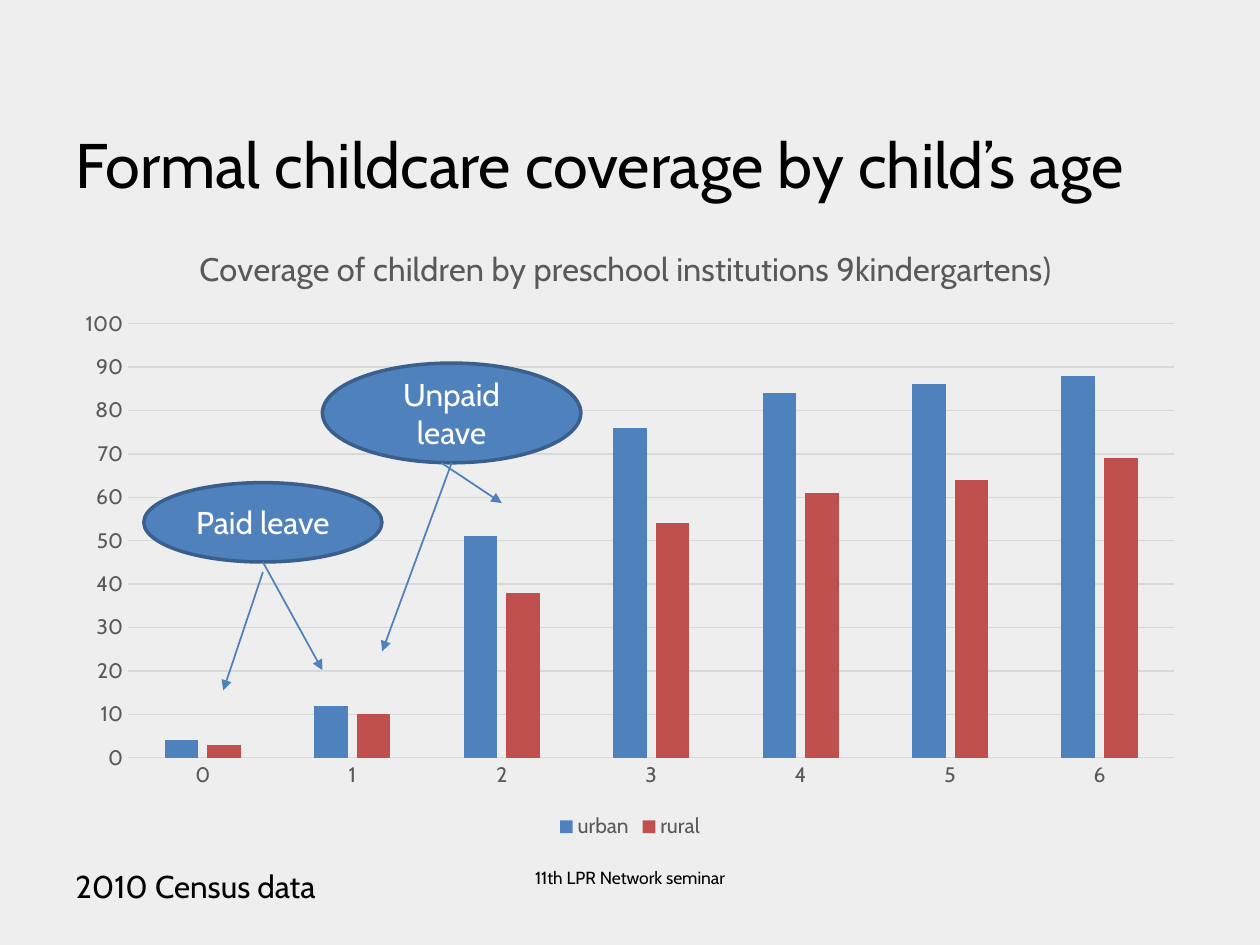
from dataclasses import dataclass

from lxml import etree
from pptx import Presentation
from pptx.chart.data import CategoryChartData
from pptx.dml.color import RGBColor
from pptx.enum.chart import XL_CHART_TYPE, XL_LEGEND_POSITION, XL_TICK_MARK
from pptx.enum.shapes import MSO_CONNECTOR, MSO_SHAPE
from pptx.enum.text import MSO_ANCHOR, PP_ALIGN
from pptx.oxml.ns import qn
from pptx.util import Cm, Pt

COLUMNS = XL_CHART_TYPE.COLUMN_CLUSTERED
LEGEND_BOTTOM = XL_LEGEND_POSITION.BOTTOM
NO_TICK = XL_TICK_MARK.NONE
STRAIGHT = MSO_CONNECTOR.STRAIGHT
ELLIPSE = MSO_SHAPE.OVAL
TOP, MIDDLE, BOTTOM = MSO_ANCHOR.TOP, MSO_ANCHOR.MIDDLE, MSO_ANCHOR.BOTTOM
LEFT, CENTER = PP_ALIGN.LEFT, PP_ALIGN.CENTER


@dataclass(frozen=True)
class Theme:
    font: str = "Cabin"
    background: str = "EEEEEE"
    text: str = "000000"
    light: str = "FFFFFF"
    muted: str = "595959"
    grid: str = "D9D9D9"
    urban: str = "4F81BD"
    rural: str = "C0504D"
    outline: str = "3A5F8C"
    title_size: float = 36
    chart_title_size: float = 18.6
    body_size: float = 18
    label_size: float = 12
    footer_size: float = 10


THEME = Theme()

AGES = ["0", "1", "2", "3", "4", "5", "6"]
COVERAGE = [
    ("urban", (4, 12, 51, 76, 84, 86, 88), THEME.urban),
    ("rural", (3, 10, 38, 54, 61, 64, 69), THEME.rural),
]

# Text, box in cm, arrows as (start, end) offsets from the bottom centre
CALLOUTS = [
    ("Paid leave", (2.9, 9.73, 4.8, 1.6),
     [((0, 0.2), (-0.8, 2.59)), ((0, 0), (1.2, 2.18))]),
    ("Unpaid leave", (6.5, 7.32, 5.21, 2.01),
     [((0, 0), (-1.4, 3.8)), ((-0.21, 0), (1.01, 0.81))]),
]


def rgb(value):
    return RGBColor.from_string(value)


def set_font(font, size, color):
    font.name = THEME.font
    font.size = Pt(size)
    font.bold = False
    font.color.rgb = rgb(color)


def write(tf, text, size, color, align, anchor):
    tf.word_wrap = True
    tf.vertical_anchor = anchor
    p = tf.paragraphs[0]
    p.alignment = align
    r = p.add_run()
    r.text = text
    set_font(r.font, size, color)


def add_text(slide, box, text, size, align=LEFT, anchor=TOP):
    tb = slide.shapes.add_textbox(*map(Cm, box))
    write(tb.text_frame, text, size, THEME.text, align, anchor)


def add_arrow(slide, start, end):
    line = slide.shapes.add_connector(STRAIGHT, *map(Cm, (*start, *end)))
    line.line.color.rgb = rgb(THEME.urban)
    line.line.width = Pt(1)
    etree.SubElement(line.line._get_or_add_ln(), qn("a:tailEnd"), type="triangle")
    etree.SubElement(line._element.spPr, qn("a:effectLst"))


def add_callout(slide, box, text, arrows):
    """Place an ellipse in the box, with arrows leaving its lower edge."""
    sp = slide.shapes.add_shape(ELLIPSE, *map(Cm, box))
    sp.shadow.inherit = False
    sp.fill.solid()
    sp.fill.fore_color.rgb = rgb(THEME.urban)
    sp.line.color.rgb = rgb(THEME.outline)
    sp.line.width = Pt(2)
    write(sp.text_frame, text, THEME.body_size, THEME.light, CENTER, MIDDLE)

    x, y, w, h = box
    for (x1, y1), (x2, y2) in arrows:
        cx, cy = x + w / 2, y + h
        add_arrow(slide, (cx + x1, cy + y1), (cx + x2, cy + y2))


def style_line(line):
    line.color.rgb = rgb(THEME.grid)
    line.width = Pt(0.75)


def style_axes(chart):
    for axis in (chart.category_axis, chart.value_axis):
        axis.major_tick_mark = axis.minor_tick_mark = NO_TICK
        set_font(axis.tick_labels.font, THEME.label_size, THEME.muted)
    style_line(chart.category_axis.format.line)

    values = chart.value_axis
    values.minimum_scale, values.maximum_scale = 0, 100
    values.major_unit = 10
    values.format.line.fill.background()
    style_line(values.major_gridlines.format.line)


def add_coverage_chart(slide, box):
    data = CategoryChartData()
    data.categories = AGES
    for name, values, _ in COVERAGE:
        data.add_series(name, values)
    chart = slide.shapes.add_chart(COLUMNS, *map(Cm, box), data).chart
    set_font(chart.font, THEME.footer_size, THEME.text)

    p = chart.chart_title.text_frame.paragraphs[0]
    r = p.add_run()
    r.text = "Coverage of children by preschool institutions 9kindergartens) "
    set_font(r.font, THEME.chart_title_size, THEME.muted)
    chart.chart_title.include_in_layout = False

    chart.has_legend = True
    chart.legend.position = LEGEND_BOTTOM
    chart.legend.include_in_layout = False
    set_font(chart.legend.font, THEME.label_size, THEME.muted)

    style_axes(chart)
    plot = chart.plots[0]
    plot.gap_width = 219
    plot.overlap = -27
    plot.vary_by_categories = False
    for series, (_, _, color) in zip(plot.series, COVERAGE):
        series.format.fill.solid()
        series.format.fill.fore_color.rgb = rgb(color)


def add_footer(slide, box):
    x, y, w, h = box
    add_text(slide, (x + (w - 8.05) / 2, y, 8.05, h),
             "11th LPR Network seminar", THEME.footer_size, CENTER)
    add_text(slide, (x, y, 5.64, 1.02), "2010 Census data", THEME.body_size)


def main():
    prs = Presentation()
    prs.slide_width, prs.slide_height = Cm(25.4), Cm(19.05)
    slide = prs.slides.add_slide(prs.slide_layouts[6])
    slide.background.fill.solid()
    slide.background.fill.fore_color.rgb = rgb(THEME.background)

    margin, width = 1.27, 22.86
    add_coverage_chart(slide, (margin, 4.45, width, 12.57))
    add_text(slide, (margin, 0.99, width, 3.18),
             "Formal childcare coverage by child’s age",
             THEME.title_size, anchor=BOTTOM)
    add_footer(slide, (margin, 17.35, width, 1.32))
    for text, box, arrows in CALLOUTS:
        add_callout(slide, box, text, arrows)

    prs.save("out.pptx")


if __name__ == "__main__":
    main()
